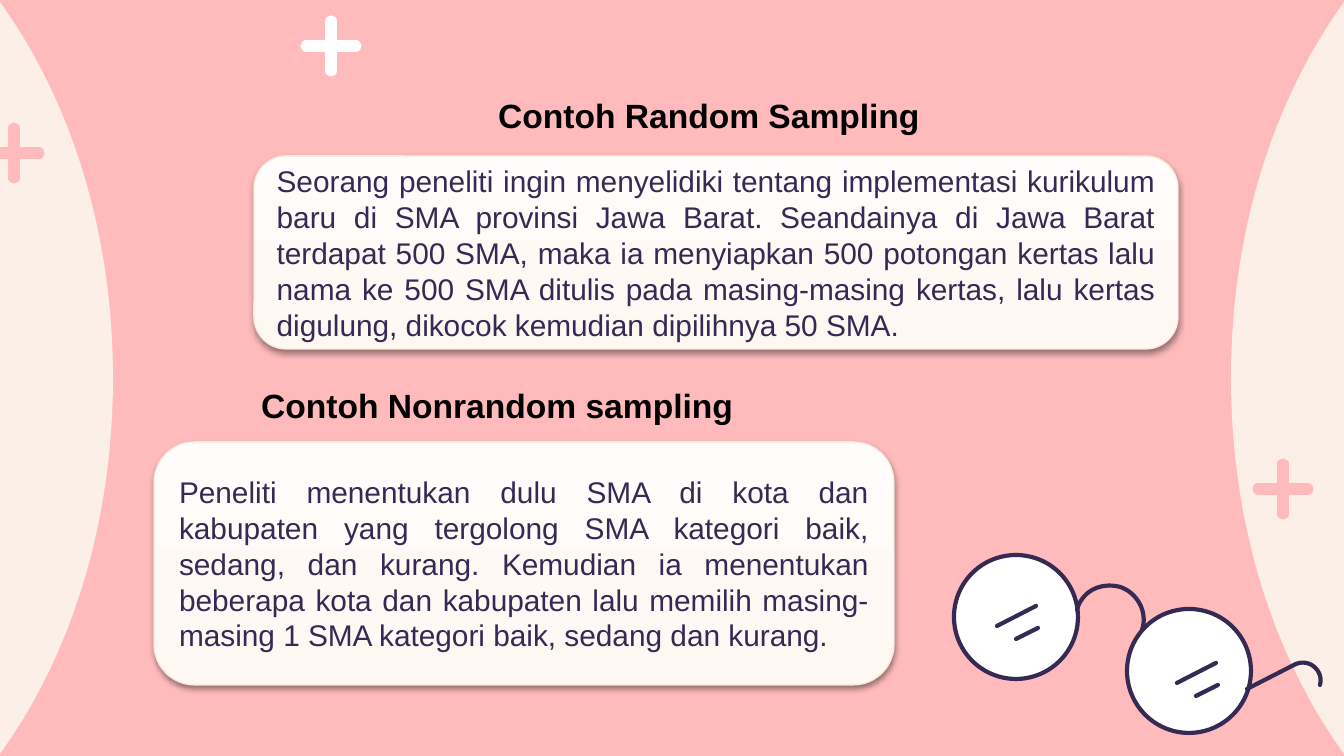
from copy import deepcopy

from lxml import etree
from pptx import Presentation
from pptx.dml.color import RGBColor
from pptx.enum.shapes import MSO_CONNECTOR, MSO_SHAPE
from pptx.enum.text import MSO_ANCHOR, MSO_AUTO_SIZE, PP_ALIGN
from pptx.oxml.ns import qn
from pptx.util import Emu, Pt

STRAIGHT = MSO_CONNECTOR.STRAIGHT
OVAL = MSO_SHAPE.OVAL
ROUNDED = MSO_SHAPE.ROUNDED_RECTANGLE
MIDDLE = MSO_ANCHOR.MIDDLE
FIT_SHAPE = MSO_AUTO_SIZE.SHAPE_TO_FIT_TEXT
JUSTIFY = PP_ALIGN.JUSTIFY

EMU_PER_PX = 914400 / 134.4
PINK, CREAM, WHITE, INK, BLACK = "FFBBBB", "FCEFE7", "FFFFFF", "352A53", "000000"
CARD_LINE = "F7EAE1"
CARD_STOPS = [(0, "FFF7F2"), (0.35, "FFF9F5"), (1, "FFFDFB")]
CURVE_STEPS = 24


def px(length):
    """Turn px into EMU."""
    return Emu(round(length * EMU_PER_PX))


def color(hex_string):
    """Turn a hex string into a colour."""
    return RGBColor.from_string(hex_string)


def curve(start, control_1, control_2, end):
    """Return points along a cubic curve."""
    points = []
    for step in range(CURVE_STEPS + 1):
        t = step / CURVE_STEPS
        weights = ((1 - t) ** 3, 3 * t * (1 - t) ** 2, 3 * t * t * (1 - t), t ** 3)
        corners = (start, control_1, control_2, end)
        points.append(tuple(sum(w * corner[axis] for w, corner in zip(weights, corners))
                            for axis in (0, 1)))
    return points


def add_outline(slide, left, top, points, close):
    """Draw a freeform through points relative to left and top."""
    places = [(px(left + x), px(top + y)) for x, y in points]
    builder = slide.shapes.build_freeform(*places[0], scale=1.0)
    builder.add_line_segments(places[1:], close=close)
    shape = builder.convert_to_shape()
    shape.shadow.inherit = False
    return shape


def set_line(shape, hex_string, width):
    """Give a shape a line with round ends."""
    shape.line.color.rgb = color(hex_string)
    shape.line.width = Pt(width)
    shape.element.spPr.find(qn("a:ln")).set("cap", "rnd")


def add_stroke(slide, start, end, hex_string, width):
    """Draw a straight round-ended line."""
    connector = slide.shapes.add_connector(STRAIGHT, *map(px, (*start, *end)))
    set_line(connector, hex_string, width)
    etree.SubElement(connector.element.spPr, qn("a:effectLst"))


def add_side_panel(slide, left, top, width, height, mirrored):
    """Draw a curved panel that bleeds off one side of the slide."""
    half = height / 2
    upper = curve((width / 2, 0), (width * 0.8, half * 0.22),
                  (width, half * 0.58), (width, half))
    lower = [(x, height - y) for x, y in reversed(upper)]
    points = [(0, 0), *upper, *lower[1:], (0, height)]
    if mirrored:
        points = [(width - x, y) for x, y in points]
    panel = add_outline(slide, left, top, points, close=True)
    panel.fill.solid()
    panel.fill.fore_color.rgb = color(CREAM)
    panel.line.fill.background()


def add_plus(slide, left, top, size, hex_string):
    """Draw a plus sign inside a square box."""
    middle = size / 2
    add_stroke(slide, (left + middle, top), (left + middle, top + size), hex_string, 6)
    add_stroke(slide, (left, top + middle), (left + size, top + middle), hex_string, 6)


def add_glasses(slide, left, top):
    """Draw a pair of round glasses from its top left corner."""
    diameter = 124
    for x, y in ((0, 0), (173, 54)):
        lens = slide.shapes.add_shape(OVAL, px(left + x), px(top + y), px(diameter), px(diameter))
        lens.shadow.inherit = False
        lens.fill.solid()
        lens.fill.fore_color.rgb = color(WHITE)
        set_line(lens, INK, 2.25)
    bridge = (curve((123, 55), (128, 36), (147, 27), (166, 32))
              + curve((166, 32), (184, 38), (194, 58), (188, 75))[1:])
    temple = [(293, 134)] + curve((340, 110), (355, 102), (370, 116), (366, 130))
    for points in (bridge, temple):
        wire = add_outline(slide, left, top, points, close=False)
        wire.fill.background()
        set_line(wire, INK, 2.25)
    for x, y in ((left + 63, top + 61), (left + 243, top + 118)):
        add_stroke(slide, (x + 19, y - 10), (x - 20, y + 10), INK, 2.25)
        add_stroke(slide, (x + 21, y + 12), (x - 1, y + 23), INK, 2.25)


def write_text(shape, text, size, hex_string, bold=False):
    """Write one wrapped paragraph and return it."""
    shape.text_frame.word_wrap = True
    paragraph = shape.text_frame.paragraphs[0]
    paragraph.text = text
    paragraph.font.name = "Arial"
    paragraph.font.size = Pt(size)
    paragraph.font.bold = bold
    paragraph.font.color.rgb = color(hex_string)
    return paragraph


def add_heading(slide, left, top, text):
    """Add a bold heading."""
    heading = slide.shapes.add_textbox(px(left), px(top), px(512), px(54))
    write_text(heading, text, 18, BLACK, bold=True)
    heading.text_frame.auto_size = FIT_SHAPE


def add_card(slide, left, top, width, height, text):
    """Add a rounded card with a gradient, a soft shadow and justified text."""
    card = slide.shapes.add_shape(ROUNDED, px(left), px(top), px(width), px(height))
    card.fill.gradient()
    card.fill.gradient_angle = 90
    stop_list = card.element.spPr.find(".//" + qn("a:gsLst"))
    stop_list.append(deepcopy(stop_list[0]))
    for stop, (position, hex_string) in zip(card.fill.gradient_stops, CARD_STOPS):
        stop.position = position
        stop.color.rgb = color(hex_string)
    card.line.color.rgb = color(CARD_LINE)
    card.line.width = Pt(0.75)
    card.shadow.inherit = False
    effects = card.element.spPr.find(qn("a:effectLst"))
    shadow = etree.SubElement(effects, qn("a:outerShdw"), blurRad="40000", dist="20000",
                              dir="5400000", rotWithShape="0")
    shadow_color = etree.SubElement(shadow, qn("a:srgbClr"), val=BLACK)
    etree.SubElement(shadow_color, qn("a:alpha"), val="38000")
    card.text_frame.vertical_anchor = MIDDLE
    write_text(card, text, 16, INK).alignment = JUSTIFY


def main():
    """Build the sampling examples slide."""
    presentation = Presentation()
    presentation.slide_width, presentation.slide_height = px(1344), px(756)
    slide = presentation.slides.add_slide(presentation.slide_layouts[6])
    slide.background.fill.solid()
    slide.background.fill.fore_color.rgb = color(PINK)

    add_side_panel(slide, 1231, -63, 339, 882, mirrored=True)
    add_side_panel(slide, -226, -63, 339, 882, mirrored=False)
    for left, top, hex_string in ((306, 21, WHITE), (-11, 128, PINK), (1258, 464, PINK)):
        add_plus(slide, left, top, 50, hex_string)
    add_glasses(slide, 954, 555)

    add_heading(slide, 485, 88, "Contoh Random Sampling")
    add_card(slide, 254, 156, 924, 193,
             "Seorang peneliti ingin menyelidiki tentang implementasi kurikulum baru di SMA "
             "provinsi Jawa Barat. Seandainya di Jawa Barat terdapat 500 SMA, maka ia "
             "menyiapkan 500 potongan kertas lalu nama ke 500 SMA ditulis pada masing-masing "
             "kertas, lalu kertas digulung, dikocok kemudian dipilihnya 50 SMA.")
    add_heading(slide, 248, 378, "Contoh Nonrandom sampling")
    add_card(slide, 154, 442, 740, 243,
             "Peneliti menentukan dulu SMA di kota dan kabupaten yang tergolong SMA kategori "
             "baik, sedang, dan kurang. Kemudian ia menentukan beberapa kota dan kabupaten "
             "lalu memilih masing-masing 1 SMA kategori baik, sedang dan kurang.")
    presentation.save("out.pptx")


if __name__ == "__main__":
    main()
